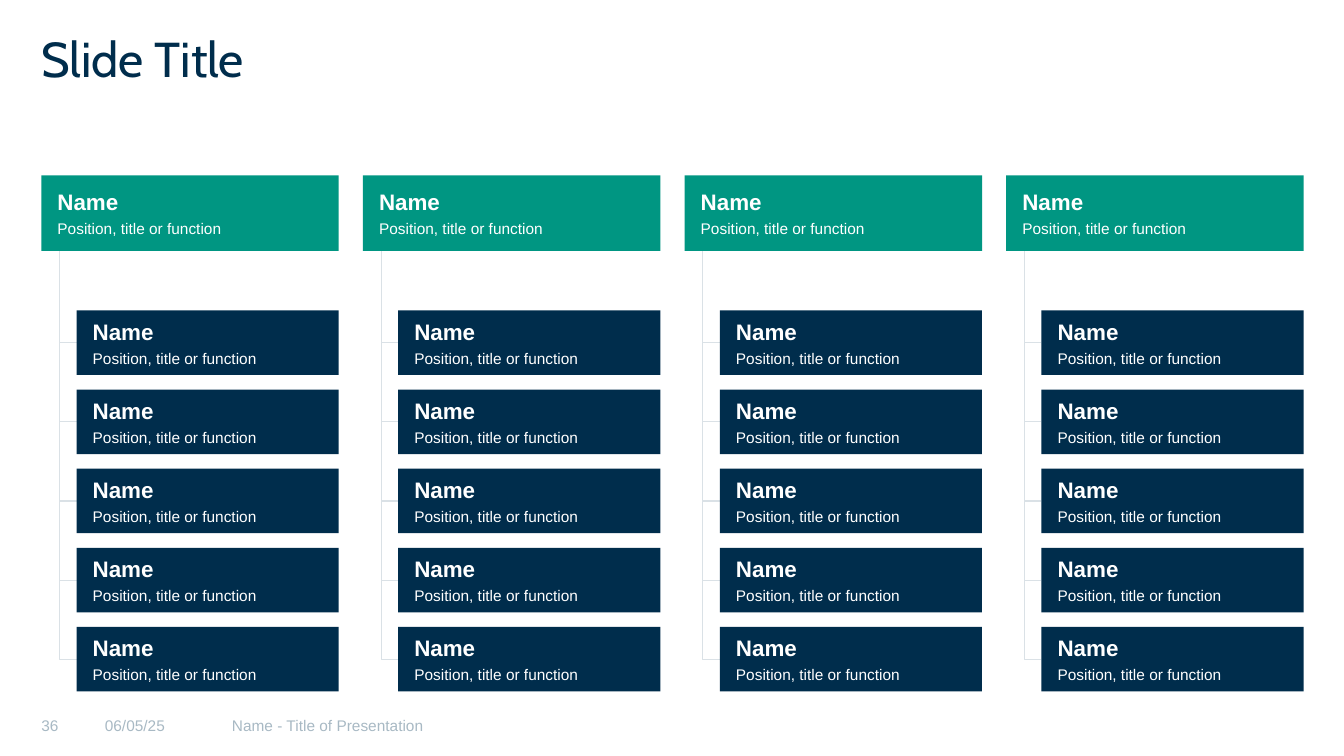
"""Build an organisation chart slide with four teams of five members."""
from lxml import etree
from pptx import Presentation
from pptx.dml.color import RGBColor
from pptx.enum.shapes import MSO_CONNECTOR, MSO_SHAPE
from pptx.enum.text import MSO_ANCHOR, MSO_AUTO_SIZE, PP_ALIGN
from pptx.oxml.ns import qn
from pptx.util import Inches, Pt

TITLE = "Slide Title"
PERSON = ("Name", "Position, title or function")
TEAMS = [{"lead": PERSON, "members": [PERSON] * 5} for _ in range(4)]
FOOTER = [
    ("36", 0.41, 0.63),
    ("06/05/25", 1.04, 1.26),
    ("Name - Title of Presentation", 2.3, 6.38),
]

NAVY, GREEN, WHITE, GREY, LINE = "002D4C", "009682", "FFFFFF", "A8B9C4", "DAE1E6"
LEFT, RIGHT = 0.41, 12.93
LEAD_TOP, LEAD_W, LEAD_H = 1.74, 2.95, 0.75
MEMBER_TOP, MEMBER_LAST, MEMBER_H = 3.08, 6.22, 0.64
INDENT, TRUNK = 0.35, 0.18


def color(value):
    return RGBColor.from_string(value)


def set_font(p, size, value, name="Arial", bold=False):
    p.font.size, p.font.name, p.font.bold = Pt(size), name, bold
    p.font.color.rgb = color(value)


def set_frame(tf, anchor, left=0, top=0, right=0, bottom=0):
    tf.word_wrap, tf.auto_size, tf.vertical_anchor = True, MSO_AUTO_SIZE.NONE, anchor
    tf.margin_left, tf.margin_top = Inches(left), Inches(top)
    tf.margin_right, tf.margin_bottom = Inches(right), Inches(bottom)


def add_card(s, person, x, y, w, h, fill):
    sp = s.shapes.add_shape(MSO_SHAPE.RECTANGLE, Inches(x), Inches(y), Inches(w), Inches(h))
    sp.shadow.inherit = False
    sp.fill.solid()
    sp.fill.fore_color.rgb = color(fill)
    sp.line.fill.background()
    tf = sp.text_frame
    set_frame(tf, MSO_ANCHOR.MIDDLE, 0.16, 0.16, 0.16, 0.16)
    name, role = tf.paragraphs[0], tf.add_paragraph()
    name.text, role.text = person
    name.alignment = role.alignment = PP_ALIGN.LEFT
    name.space_before = name.space_after = Pt(3)
    set_font(name, 16, WHITE, bold=True)
    set_font(role, 11, WHITE)
    role.level = 1
    role._p.get_or_add_pPr().set("marL", "0")


def add_branch(s, x, y, end_x, end_y):
    """Draw an elbow going down and then right, as a turned and flipped bend."""
    w, h = end_x - x, end_y - y
    cx, cy = x + w / 2, y + h / 2
    line = s.shapes.add_connector(
        MSO_CONNECTOR.ELBOW,
        Inches(cx + h / 2), Inches(cy - w / 2), Inches(cx - h / 2), Inches(cy + w / 2))
    line.line.color.rgb = color(LINE)
    line.line.width = Pt(0.75)
    props = line._element.spPr
    props.find(qn("a:xfrm")).set("rot", "16200000")
    props.find(qn("a:prstGeom")).set("prst", "bentConnector2")
    etree.SubElement(props, qn("a:effectLst"))


def add_team(s, team, x):
    members = team["members"]
    step = (MEMBER_LAST - MEMBER_TOP) / (len(members) - 1)
    member_x = x + INDENT
    for i, member in enumerate(members):
        y = MEMBER_TOP + i * step
        add_branch(s, x + TRUNK, LEAD_TOP + LEAD_H, member_x, y + MEMBER_H / 2)
        add_card(s, member, member_x, y, LEAD_W - INDENT, MEMBER_H, NAVY)
    add_card(s, team["lead"], x, LEAD_TOP, LEAD_W, LEAD_H, GREEN)


def add_title(s):
    title = s.shapes.title
    title.left, title.top = Inches(LEFT), Inches(0.4)
    title.width, title.height = Inches(RIGHT - LEFT), Inches(1.1)
    set_frame(title.text_frame, MSO_ANCHOR.TOP)
    p = title.text_frame.paragraphs[0]
    p.text, p.alignment, p.line_spacing = TITLE, PP_ALIGN.LEFT, 0.8
    set_font(p, 35, NAVY, "Cabin")


def add_footer(s):
    for text, x, w in FOOTER:
        box = s.shapes.add_textbox(Inches(x), Inches(6.86), Inches(w), Inches(0.64))
        set_frame(box.text_frame, MSO_ANCHOR.MIDDLE, top=0.04)
        p = box.text_frame.paragraphs[0]
        p.text = text
        set_font(p, 11, GREY)


def main():
    prs = Presentation()
    prs.slide_width, prs.slide_height = Inches(13.33), Inches(7.5)
    s = prs.slides.add_slide(prs.slide_layouts[5])
    add_title(s)
    pitch = (RIGHT - LEFT - LEAD_W) / (len(TEAMS) - 1)
    for i, team in enumerate(TEAMS):
        add_team(s, team, LEFT + i * pitch)
    add_footer(s)
    prs.save("out.pptx")


if __name__ == "__main__":
    main()
